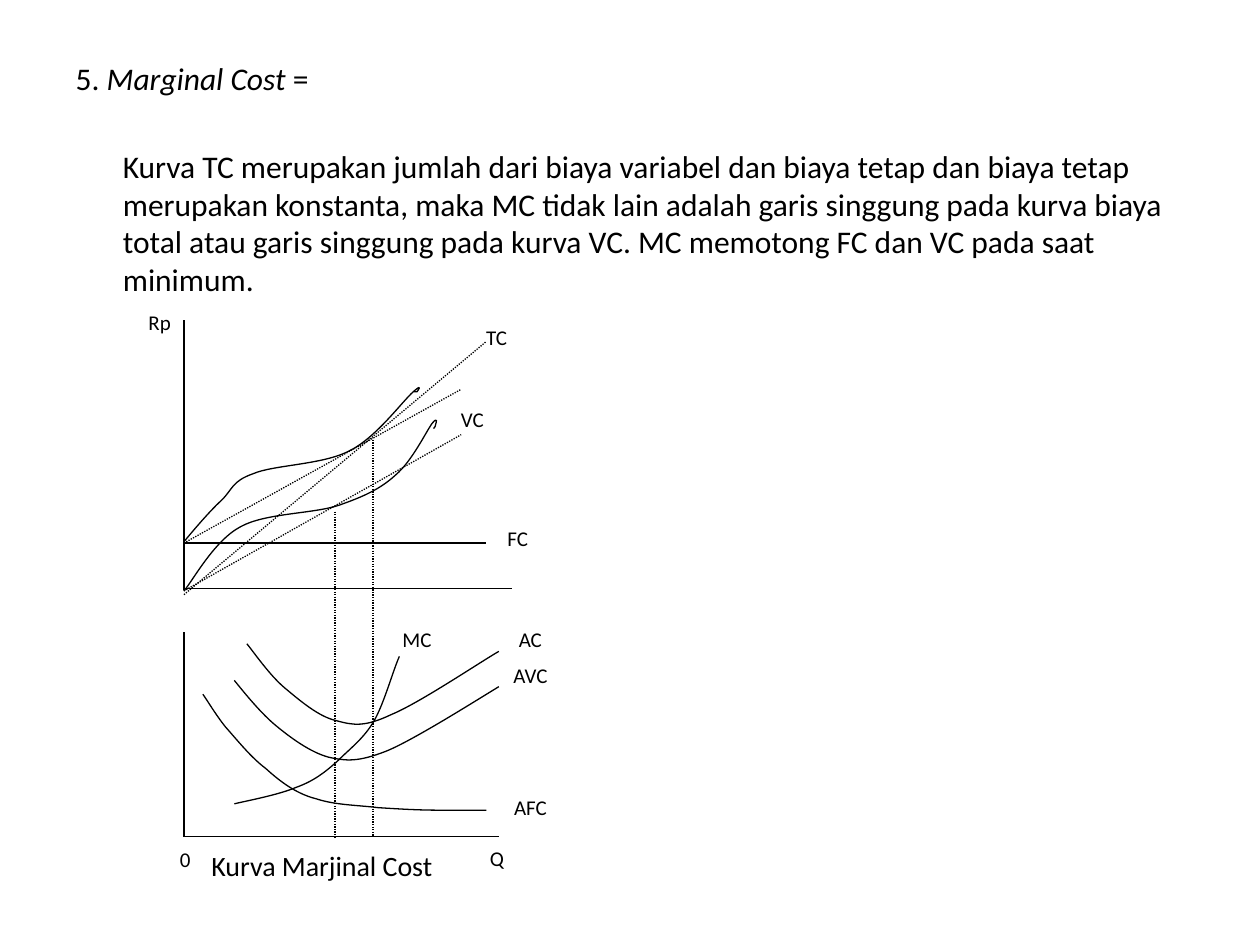
from dataclasses import dataclass

from lxml import etree
from pptx import Presentation
from pptx import util as u
from pptx.dml.color import RGBColor
from pptx.enum import dml, shapes, text
from pptx.oxml.ns import qn


@dataclass(frozen=True)
class Theme:
    font: str = "Calibri"
    ink: RGBColor = RGBColor(0, 0, 0)
    paper: RGBColor = RGBColor(255, 255, 255)
    body: int = 18
    caption: int = 16
    label: int = 12
    stroke: float = 0.75


THEME = Theme()
LEFT, CENTER = text.PP_ALIGN.LEFT, text.PP_ALIGN.CENTER
HANGING = u.Inches(3 / 8)

# Each curve: anchor, then control, control, anchor for each Bézier piece
TOTAL_CURVES = {
    "VC": [(0, 2.15), (.07, 2.07), (.24, 1.75), (.45, 1.64),
           (.65, 1.53), (1.02, 1.54), (1.23, 1.47),
           (1.43, 1.4), (1.56, 1.34), (1.68, 1.23),
           (1.81, 1.12), (1.92, .89), (1.97, .82),
           (2.02, .76), (2, .82), (2, .82), (2, .83), (1.99, .86), (1.98, .86)],
    "TC": [(0, 1.76), (.05, 1.7), (.2, 1.52), (.3, 1.43),
           (.39, 1.34), (.38, 1.28), (.55, 1.22),
           (.71, 1.15), (1.1, 1.15), (1.31, 1.04),
           (1.52, .94), (1.73, .65), (1.82, .57),
           (1.91, .49), (1.85, .57), (1.85, .57), (1.85, .57), (1.83, .57), (1.82, .57)],
}
UNIT_CURVES = {
    "AC": [(.5, .09), (.55, .15), (.68, .34), (.8, .44),
           (.92, .54), (1.07, .67), (1.21, .7),
           (1.35, .74), (1.44, .75), (1.65, .65), (1.87, .56), (2.36, .23), (2.5, .15)],
    "AVC": [(.4, .38), (.45, .44), (.59, .62), (.72, .73),
            (.84, .83), (1, .95), (1.15, .99),
            (1.29, 1.02), (1.38, 1.03), (1.61, .94), (1.83, .85), (2.35, .52), (2.5, .43)],
    "AFC": [(.15, .49), (.18, .53), (.25, .65), (.33, .75),
            (.42, .85), (.53, .99), (.65, 1.08),
            (.76, 1.18), (.89, 1.28), (1.05, 1.32),
            (1.2, 1.37), (1.38, 1.37), (1.54, 1.39),
            (1.7, 1.4), (1.85, 1.41), (2.03, 1.41), (2.21, 1.41), (2.32, 1.41), (2.4, 1.41)],
    "MC": [(.4, 1.36), (.48, 1.34), (.75, 1.29), (.89, 1.23),
           (1.03, 1.18), (1.12, 1.11), (1.22, 1.02),
           (1.32, .92), (1.43, .84), (1.51, .7), (1.59, .56), (1.66, .3), (1.71, .19)],
}


def apply(target, formats):
    for name, value in formats.items():
        setattr(target, name, value)


def write(para, words, size, italic=False):
    span = para.add_run()
    span.text = words
    apply(span.font, {"name": THEME.font, "size": u.Pt(size), "italic": italic})
    span.font.color.rgb = THEME.ink


def ink_line(line):
    line.color.rgb = THEME.ink
    line.width = u.Pt(THEME.stroke)


def place(origin, point):
    return tuple(u.Inches(base + offset) for base, offset in zip(origin, point))


def add_line(group, origin, start, end, dotted=False):
    connector = group.shapes.add_connector(
        shapes.MSO_CONNECTOR.STRAIGHT, *place(origin, start), *place(origin, end))
    ink_line(connector.line)
    if dotted:
        connector.line.dash_style = dml.MSO_LINE.ROUND_DOT
    etree.SubElement(connector._element.spPr, qn("a:effectLst"))


def add_curve(group, origin, points):
    start, *rest = (place(origin, point) for point in points)
    builder = group.shapes.build_freeform(*start, scale=1.0)
    builder.add_line_segments(rest, close=False)
    curve = builder.convert_to_shape()
    # Merge every three straight segments into one Bézier piece
    segments = list(curve._element.iter(qn("a:lnTo")))
    for first in range(0, len(segments), 3):
        piece = segments[first:first + 3]
        bend = etree.Element(qn("a:cubicBezTo"))
        piece[0].addprevious(bend)
        for segment in piece:
            bend.append(segment[0])
            segment.getparent().remove(segment)
    curve.fill.background()
    curve.shadow.inherit = False
    ink_line(curve.line)


def add_label(group, origin, words, point, align=LEFT):
    box = group.shapes.add_textbox(*place(origin, point), u.Inches(.5), u.Inches(.29))
    box.text_frame.word_wrap = True
    para = box.text_frame.paragraphs[0]
    para.alignment = align
    write(para, words, THEME.label)


def add_axis_mark(group, origin, words, point):
    box = group.shapes.add_shape(shapes.MSO_SHAPE.RECTANGLE, *place(origin, point),
                                 u.Inches(.38), u.Inches(.36))
    box.fill.solid()
    box.fill.fore_color.rgb = THEME.paper
    box.line.fill.background()
    box.shadow.inherit = False
    box.text_frame.vertical_anchor = text.MSO_ANCHOR.TOP
    para = box.text_frame.paragraphs[0]
    para.alignment = LEFT
    write(para, words, THEME.label)


def add_explanation(page, left, top, width, height):
    box = page.placeholders[1]
    apply(box, {"left": u.Inches(left), "top": u.Inches(top),
                "width": u.Inches(width), "height": u.Inches(height)})
    frame = box.text_frame
    apply(frame, {"word_wrap": True, "auto_size": text.MSO_AUTO_SIZE.NONE})
    heading, detail = frame.paragraphs[0], frame.add_paragraph()
    for para, indent in ((heading, -HANGING), (detail, 0)):
        props = para._p.get_or_add_pPr()
        props.set("marL", str(HANGING))
        props.set("indent", str(indent))
        etree.SubElement(props, qn("a:buNone"))
    detail.space_before = u.Pt(28.5)
    write(heading, "5. ", THEME.body)
    write(heading, "Marginal Cost", THEME.body, italic=True)
    write(heading, " =", THEME.body)
    write(detail, "Kurva TC merupakan jumlah dari biaya variabel dan biaya tetap dan biaya "
          "tetap merupakan konstanta, maka MC tidak lain adalah garis singgung pada kurva "
          "biaya total atau garis singgung pada kurva VC. MC memotong FC dan VC pada saat "
          "minimum.", THEME.body)


def add_total_cost_graph(group, origin):
    # Axes and fixed cost
    for start, end in (((0, 0), (0, 2.14)), ((0, 2.13), (2.6, 2.13)),
                       ((0, 1.77), (2.4, 1.77))):
        add_line(group, origin, start, end)
    # Tangents
    for start, end in (((0, 2.15), (2.2, .91)), ((0, 1.77), (2.2, .55)),
                       ((0, 2.18), (2.4, .17))):
        add_line(group, origin, start, end, dotted=True)
    for points in TOTAL_CURVES.values():
        add_curve(group, origin, points)
    for words, point in (("VC", (2.1, .64)), ("TC", (2.3, -.01)), ("Rp", (-.38, -.13))):
        add_label(group, origin, words, point)
    add_label(group, origin, "FC", (2.4, 1.58), CENTER)


def add_unit_cost_graph(group, origin):
    # Axes
    base = 1.62
    add_line(group, origin, (0, 0), (0, base))
    add_line(group, origin, (0, base), (2.5, base))
    # Guides down from the tangent points of the upper graph
    for across, top in ((1.5, -1.53), (1.2, -.96)):
        add_line(group, origin, (across, top), (across, base), dotted=True)
    for points in UNIT_CURVES.values():
        add_curve(group, origin, points)
    for words, point in (("AFC", (2.5, 1.24)), ("AVC", (2.5, .19)),
                         ("AC", (2.5, -.1)), ("MC", (1.6, -.1))):
        add_label(group, origin, words, point, CENTER)
    add_axis_mark(group, origin, "Q", (2.33, 1.64))
    add_axis_mark(group, origin, "0", (-.13, 1.65))


def add_caption(page, left, top, width, height):
    box = page.shapes.add_textbox(*map(u.Inches, (left, top, width, height)))
    apply(box.text_frame, {"word_wrap": False, "vertical_anchor": text.MSO_ANCHOR.MIDDLE,
                           "auto_size": text.MSO_AUTO_SIZE.SHAPE_TO_FIT_TEXT})
    write(box.text_frame.paragraphs[0], "Kurva Marjinal Cost", THEME.caption)


def main():
    deck = Presentation()
    apply(deck, {"slide_width": u.Inches(10), "slide_height": u.Inches(7.5)})
    page = deck.slides.add_slide(deck.slide_layouts[1])
    title = page.shapes.title._element
    title.getparent().remove(title)
    add_explanation(page, .5, .42, 9, 6.29)
    graphs = page.shapes.add_group_shape()
    add_total_cost_graph(graphs, (1.46, 2.54))
    add_unit_cost_graph(graphs, (1.46, 5.02))
    add_caption(page, 1.58, 6.68, 2.2, .37)
    deck.save("out.pptx")


if __name__ == "__main__":
    main()
